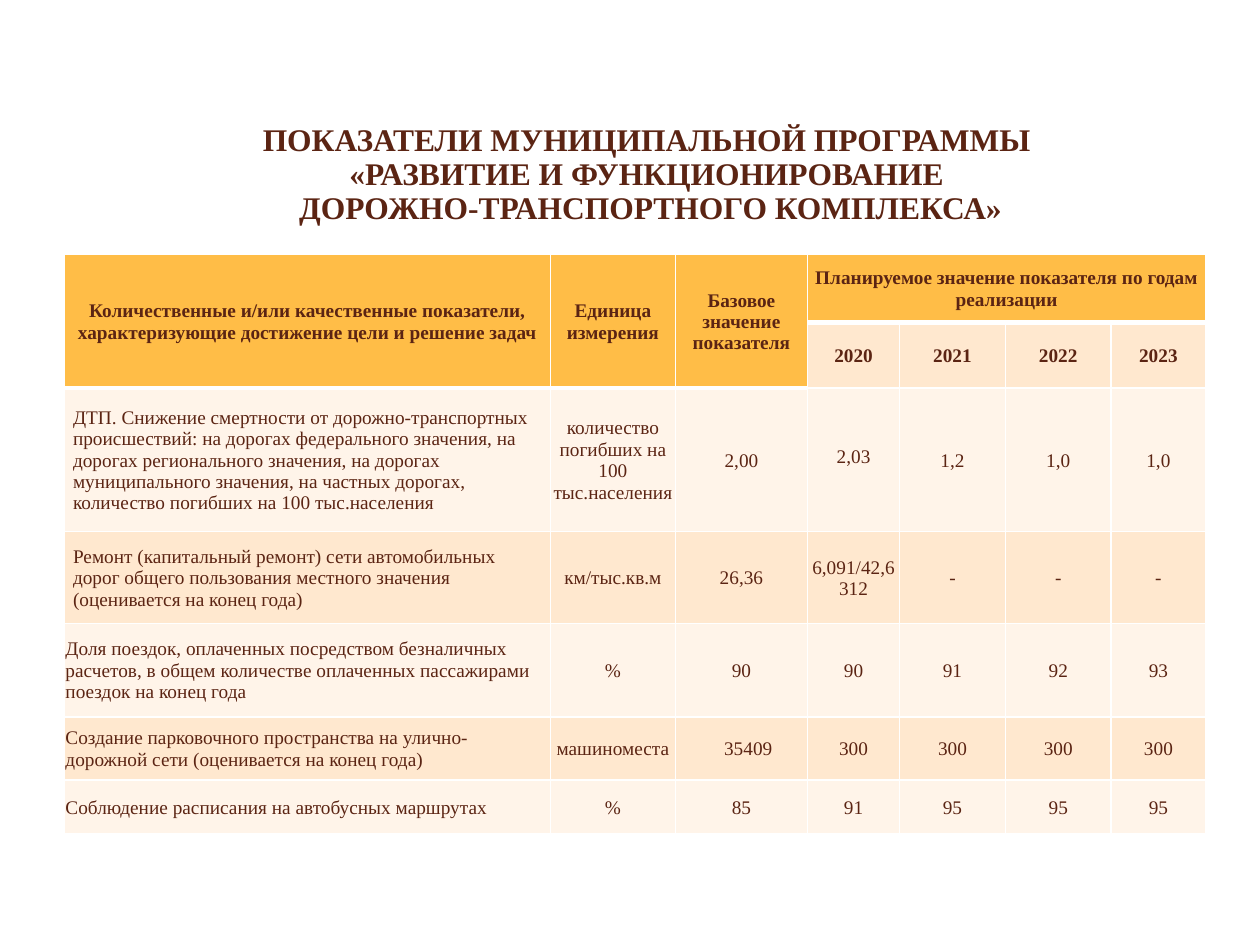
from typing import NamedTuple

from lxml.etree import SubElement
from pptx import Presentation
from pptx.dml.color import RGBColor
from pptx.enum.text import MSO_ANCHOR as Anchor, PP_ALIGN as Align
from pptx.oxml.ns import qn
from pptx.util import Inches, Pt

FONT = "Times New Roman"
BROWN = RGBColor(0x5B, 0x24, 0x13)
AMBER = RGBColor(0xFF, 0xBD, 0x47)
PEACH = RGBColor(0xFF, 0xE8, 0xCF)
CREAM = RGBColor(0xFF, 0xF4, 0xE9)
WHITE = RGBColor(0xFF, 0xFF, 0xFF)

COLUMN_WIDTHS = [3.86, 0.99, 1.05, 0.73, 0.84, 0.84, 0.75]
ROW_HEIGHTS = [0.54, 0.52, 1.14, 0.73, 0.74, 0.5, 0.43]
THIN, THICK = 1, 3
FIRST_YEAR_COLUMN = 3
HEADER_ROWS = 2


class Indicator(NamedTuple):
    name: str
    unit: str
    base: str
    years: list[str]
    indent: float = 0.01


HEADINGS = [
    "Количественные и/или качественные показатели, характеризующие достижение цели и решение задач",
    "Единица измерения",
    "Базовое значение показателя",
]
PLAN_HEADING = "Планируемое значение показателя по годам реализации"
YEARS = ["2020", "2021", "2022", "2023"]
INDICATORS = [
    Indicator(
        "ДТП. Снижение смертности от дорожно-транспортных происшествий: на дорогах "
        "федерального значения, на дорогах регионального значения, на дорогах "
        "муниципального значения, на частных дорогах, количество погибших на 100 тыс.населения",
        "количество погибших на 100 тыс.населения", "2,00", ["2,03", "1,2", "1,0", "1,0"], 0.07),
    Indicator(
        "Ремонт (капитальный ремонт) сети автомобильных дорог общего пользования "
        "местного значения (оценивается на конец года)",
        "км/тыс.кв.м", "26,36", ["6,091/42,6312", "-", "-", "-"], 0.07),
    Indicator(
        "Доля поездок, оплаченных посредством безналичных расчетов, в общем количестве "
        "оплаченных пассажирами поездок на конец года",
        "%", "90", ["90", "91", "92", "93"]),
    Indicator(
        "Создание парковочного пространства на улично-дорожной сети "
        "(оценивается на конец года)",
        "машиноместа", "35409", ["300"] * 4),
    Indicator("Соблюдение расписания на автобусных маршрутах",
              "%", "85", ["91", "95", "95", "95"]),
]


def write(frame, text: str, *, size: float = 11, bold: bool = False,
          align=Align.CENTER, line_spacing: float | None = None) -> None:
    frame.text = text
    paragraph = frame.paragraphs[0]
    paragraph.alignment = align
    if line_spacing:
        paragraph.line_spacing = line_spacing
    for run in paragraph.runs:
        run.font.name = FONT
        run.font.size = Pt(size)
        run.font.bold = bold
        run.font.color.rgb = BROWN


def style_cell(cell, color: RGBColor, *, top: int = THIN, bottom: int = THIN) -> None:
    cell.vertical_anchor = Anchor.MIDDLE
    cell.margin_left = cell.margin_right = cell.margin_top = Inches(0.01)
    cell.margin_bottom = 0
    properties = cell._tc.get_or_add_tcPr()
    for side, width in (("L", THIN), ("R", THIN), ("T", top), ("B", bottom)):
        line = SubElement(properties, qn(f"a:ln{side}"), w=str(Pt(width)))
        fill = SubElement(line, qn("a:solidFill"))
        SubElement(fill, qn("a:srgbClr"), val=str(WHITE))
    cell.fill.solid()
    cell.fill.fore_color.rgb = color


def style_header(table) -> None:
    for column in range(len(COLUMN_WIDTHS)):
        if column < FIRST_YEAR_COLUMN:
            for row in range(HEADER_ROWS):
                style_cell(table.cell(row, column), AMBER, bottom=THICK)
        else:
            style_cell(table.cell(0, column), AMBER, bottom=THICK)
            style_cell(table.cell(1, column), PEACH, top=THICK)


def fill_header(table) -> None:
    for column, heading in enumerate(HEADINGS):
        table.cell(0, column).merge(table.cell(1, column))
        write(table.cell(0, column).text_frame, heading, bold=True)
    plan = table.cell(0, FIRST_YEAR_COLUMN)
    plan.merge(table.cell(0, len(COLUMN_WIDTHS) - 1))
    write(plan.text_frame, PLAN_HEADING, bold=True)
    for column, year in enumerate(YEARS, FIRST_YEAR_COLUMN):
        write(table.cell(1, column).text_frame, year, bold=True)


def fill_indicator(table, row: int, indicator: Indicator) -> None:
    color = PEACH if row % 2 else CREAM
    top = THICK if row == HEADER_ROWS else THIN
    values = [indicator.name, indicator.unit, indicator.base, *indicator.years]
    for column, value in enumerate(values):
        cell = table.cell(row, column)
        style_cell(cell, color, top=top if column < FIRST_YEAR_COLUMN else THIN)
        write(cell.text_frame, value, align=Align.CENTER if column else Align.LEFT)
    name_cell = table.cell(row, 0)
    name_cell.margin_left = name_cell.margin_right = Inches(indicator.indent)


def main() -> None:
    presentation = Presentation()
    presentation.slide_width, presentation.slide_height = Inches(10), Inches(7.5)
    slide = presentation.slides.add_slide(presentation.slide_layouts[5])

    # Title
    title = slide.shapes.title
    title.left, title.top = Inches(0.83), Inches(0.92)
    title.width, title.height = Inches(8.67), Inches(0.94)
    title.text_frame.vertical_anchor = Anchor.MIDDLE
    write(title.text_frame,
          "ПОКАЗАТЕЛИ МУНИЦИПАЛЬНОЙ ПРОГРАММЫ \v«РАЗВИТИЕ И ФУНКЦИОНИРОВАНИЕ \v"
          "ДОРОЖНО-ТРАНСПОРТНОГО КОМПЛЕКСА»",
          size=18, bold=True, line_spacing=0.9)

    # Table of indicators
    table = slide.shapes.add_table(
        len(ROW_HEIGHTS), len(COLUMN_WIDTHS), Inches(0.51), Inches(2.02),
        Inches(sum(COLUMN_WIDTHS)), Inches(sum(ROW_HEIGHTS))).table
    for column, width in zip(table.columns, COLUMN_WIDTHS):
        column.width = Inches(width)
    for row, height in zip(table.rows, ROW_HEIGHTS):
        row.height = Inches(height)
    style_header(table)
    fill_header(table)
    for row, indicator in enumerate(INDICATORS, HEADER_ROWS):
        fill_indicator(table, row, indicator)

    # Two values sit slightly off the centre of their cells
    table.cell(2, FIRST_YEAR_COLUMN).margin_bottom = Inches(0.05)
    parking_base = table.cell(5, 2)
    parking_base.text_frame.paragraphs[0].alignment = Align.RIGHT
    parking_base.margin_right = Inches(0.28)

    presentation.save("out.pptx")


if __name__ == "__main__":
    main()
